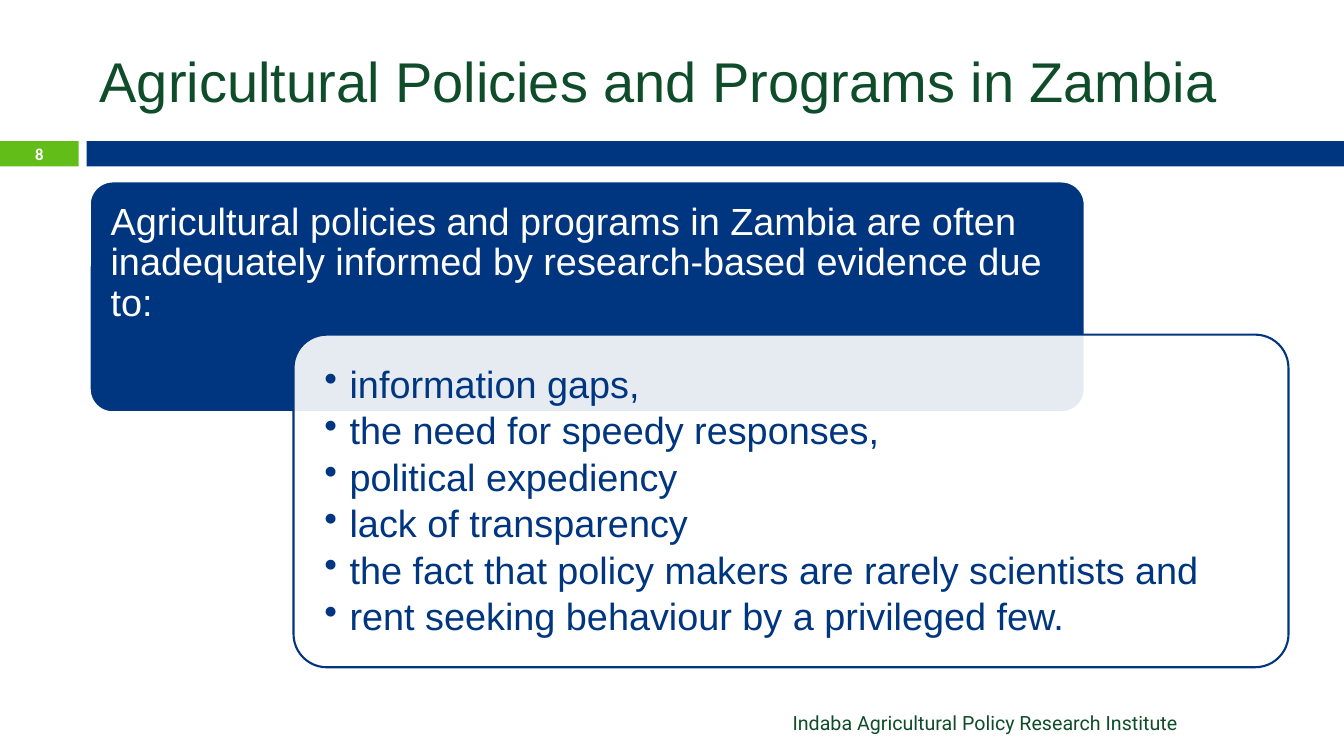
import pptx
import pptx.util
import pptx.dml.color
import pptx.enum.shapes
import pptx.enum.text
import pptx.oxml.ns
import lxml.etree

COLORS = {"navy": "003580", "lime": "62BD19", "forest": "0F4D2A", "white": "FFFFFF"}
ALIGN = pptx.enum.text.PP_ALIGN
ANCHOR = pptx.enum.text.MSO_ANCHOR
SHAPES = pptx.enum.shapes.MSO_SHAPE
WIDTH, HEIGHT = 13.33, 7.5
LEFT, RIGHT = 0.89, 12.78
REASONS = [
    "information gaps,",
    "the need for speedy responses,",
    "political expediency",
    "lack of transparency",
    "the fact that policy makers are rarely scientists and",
    "rent seeking behaviour by a privileged few.",
]


def rgb(name):
    return pptx.dml.color.RGBColor.from_string(COLORS[name])


def inches(*lengths):
    return [pptx.util.Inches(v) for v in lengths]


def set_margins(tf, left, top, right, bottom):
    tf.margin_left, tf.margin_top, tf.margin_right, tf.margin_bottom = inches(
        left, top, right, bottom)


def add_run(p, text, size, color, font="Arial", bold=False):
    r = p.add_run()
    r.text = text
    r.font.size = pptx.util.Pt(size)
    r.font.name = font
    r.font.bold = bold
    r.font.color.rgb = rgb(color)


def add_panel(slide, box, preset, fill, line=None):
    sp = slide.shapes.add_shape(preset, *inches(*box))
    sp.shadow.inherit = False
    sp.fill.solid()
    sp.fill.fore_color.rgb = rgb(fill)
    if line:
        sp.line.color.rgb = rgb(line)
        sp.line.width = pptx.util.Pt(1.5)
    else:
        sp.line.fill.background()
    return sp


def add_label(slide, box, text, size, color, font="Arial", align=ALIGN.LEFT,
              anchor=ANCHOR.MIDDLE, bold=False):
    tf = slide.shapes.add_textbox(*inches(*box)).text_frame
    tf.word_wrap = True
    tf.vertical_anchor = anchor
    p = tf.paragraphs[0]
    p.alignment = align
    add_run(p, text, size, color, font, bold)


def add_bullet(p, indent):
    pPr = p._p.get_or_add_pPr()
    pPr.set("marL", str(pptx.util.Inches(indent)))
    pPr.set("indent", str(-pptx.util.Inches(indent)))
    lxml.etree.SubElement(pPr, pptx.oxml.ns.qn("a:buChar")).set("char", "•")


def add_card(slide, box, fill, line, ink, texts, margin, space_after, bulleted=False):
    """Rounded card with its paragraphs set from the top left."""
    sp = add_panel(slide, box, SHAPES.ROUNDED_RECTANGLE, fill, line)
    sp.adjustments[0] = 0.1
    tf = sp.text_frame
    tf.word_wrap = True
    tf.vertical_anchor = ANCHOR.TOP
    set_margins(tf, *[margin] * 4)
    for i, text in enumerate(texts):
        p = tf.add_paragraph() if i else tf.paragraphs[0]
        if bulleted:
            add_bullet(p, 0.25)
        p.alignment = ALIGN.LEFT
        p.line_spacing = 0.9
        p.space_after = pptx.util.Pt(space_after)
        add_run(p, text, 27, ink)
    return sp


def add_header(slide, left, top, width, height):
    add_label(slide, (left, top, width, height),
              "Agricultural Policies and Programs in Zambia", 40, "forest")


def add_number_band(slide, top, height):
    tab, gap = 0.78, 0.08
    add_panel(slide, (0, top, tab, height), SHAPES.RECTANGLE, "lime")
    add_panel(slide, (tab + gap, top, WIDTH - tab - gap, height), SHAPES.RECTANGLE, "navy")
    add_label(slide, (0, top, tab, height), "8", 11.9, "white", "Calibri",
              ALIGN.CENTER, bold=True)


def add_cards(slide, left, top, right, bottom):
    """Statement card, overlapped at its lower right by the card of reasons."""
    width = 0.83 * (right - left)
    add_card(slide, (left, top, width, 2.29), "navy", "white", "white",
             ["Agricultural policies and programs in Zambia are often inadequately "
              "informed by research-based evidence due to:"], 0.14, 9.45)
    sp = add_card(slide, (right - width, bottom - 3.3, width, 3.3), "white", "navy", "navy",
                  REASONS, 0.21, 4.05, bulleted=True)
    color = sp.fill._xPr.find(".//" + pptx.oxml.ns.qn("a:srgbClr"))
    lxml.etree.SubElement(color, pptx.oxml.ns.qn("a:alpha")).set("val", "90000")


def add_footer(slide, left, top, width, height):
    add_label(slide, (left, top, width, height),
              "Indaba Agricultural Policy Research Institute", 14, "forest", "Roboto",
              ALIGN.RIGHT, ANCHOR.TOP)


def main():
    prs = pptx.Presentation()
    prs.slide_width, prs.slide_height = inches(WIDTH, HEIGHT)
    slide = prs.slides.add_slide(prs.slide_layouts[6])
    add_number_band(slide, 1.4, 0.25)
    add_footer(slide, 6.11, 7, 5.67, 0.34)
    add_header(slide, LEFT, 0.25, RIGHT - LEFT, 1.08)
    add_cards(slide, LEFT, 1.8, RIGHT, 6.62)
    prs.save("out.pptx")


if __name__ == "__main__":
    main()
